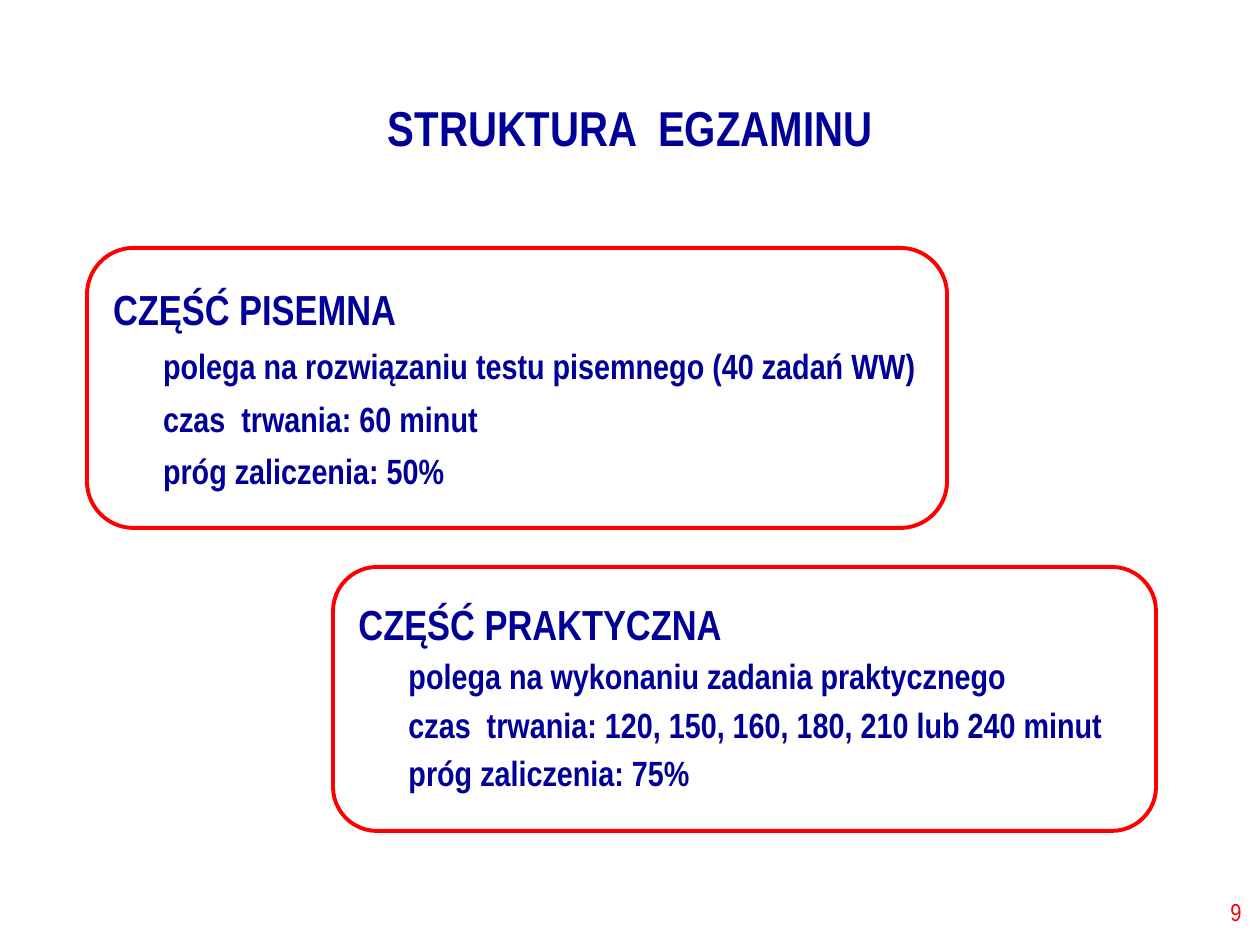
import dataclasses

import lxml.etree
import pptx
import pptx.dml.color
import pptx.enum.shapes
import pptx.enum.text
import pptx.oxml.ns
import pptx.util

EMU_PER_PX = 914400 / 126
ALIGN = pptx.enum.text.PP_ALIGN
qn = pptx.oxml.ns.qn


@dataclasses.dataclass
class Theme:
    font: str = "Arial Narrow"
    ink: str = "000099"
    accent: str = "FF0000"
    paper: str = "FFFFFF"
    title: int = 28
    heading: int = 24
    item: int = 20
    number: int = 14
    outline: float = 2.25


def px(length):
    return pptx.util.Emu(round(length * EMU_PER_PX))


def rgb(value):
    return pptx.dml.color.RGBColor.from_string(value)


def apply(target, values):
    for name, value in values.items():
        setattr(target, name, value)


class SlideBuilder:
    def __init__(self, deck, theme):
        self.theme = theme
        self.page = deck.slides.add_slide(deck.slide_layouts[1])

    def place(self, shape, left, top, width, height):
        apply(shape, {"left": px(left), "top": px(top),
                      "width": px(width), "height": px(height)})

    def frame(self, shape, **values):
        box = shape.text_frame
        apply(box, {"word_wrap": True,
                    "auto_size": pptx.enum.text.MSO_AUTO_SIZE.NONE,
                    "vertical_anchor": pptx.enum.text.MSO_ANCHOR.MIDDLE, **values})
        return box

    def add_text(self, para, text, size, color, bold=True, **values):
        apply(para, values)
        span = para.add_run()
        span.text = text
        apply(span.font, {"name": self.theme.font, "size": pptx.util.Pt(size), "bold": bold})
        span.font.color.rgb = rgb(color)

    def bullet(self, para, char, indent, hanging):
        props = para._p.get_or_add_pPr()
        props.set("marL", str(px(indent)))
        props.set("indent", str(-px(hanging)))
        if not char:
            lxml.etree.SubElement(props, qn("a:buNone"))
            return
        color = lxml.etree.SubElement(props, qn("a:buClr"))
        lxml.etree.SubElement(color, qn("a:srgbClr"), val=self.theme.paper)
        lxml.etree.SubElement(props, qn("a:buFont"), typeface="Arial")
        lxml.etree.SubElement(props, qn("a:buChar"), char=char)

    def title(self, text, *area):
        shape = self.page.shapes.title
        self.place(shape, *area)
        box = self.frame(shape, margin_top=0, margin_bottom=0)
        self.add_text(box.paragraphs[0], text, self.theme.title, self.theme.ink,
                      alignment=ALIGN.CENTER, line_spacing=1.08)

    def number(self, text, *area):
        shape = self.page.shapes.add_textbox(0, 0, 0, 0)
        self.place(shape, *area)
        self.add_text(self.frame(shape).paragraphs[0], text, self.theme.number,
                      self.theme.accent, bold=False, alignment=ALIGN.RIGHT)

    def rounded_shape(self, *area):
        shape = self.page.shapes.add_shape(
            pptx.enum.shapes.MSO_SHAPE.ROUNDED_RECTANGLE, 0, 0, 0, 0)
        self.place(shape, *area)
        shape.shadow.inherit = False
        shape.fill.solid()
        shape.fill.fore_color.rgb = rgb(self.theme.paper)
        return shape

    def rounded_body(self, *area):
        shape = self.page.placeholders[1]
        self.place(shape, *area)
        outline = lxml.etree.SubElement(shape._element.spPr, qn("a:prstGeom"), prst="roundRect")
        lxml.etree.SubElement(outline, qn("a:avLst"))
        return shape

    def card(self, shape, heading, items, spacing):
        shape.line.color.rgb = rgb(self.theme.accent)
        shape.line.width = pptx.util.Pt(self.theme.outline)
        box = self.frame(shape)
        para = box.paragraphs[0]
        self.bullet(para, None, 48, 48)
        self.add_text(para, heading, self.theme.heading, self.theme.ink, alignment=ALIGN.LEFT,
                      line_spacing=spacing, space_before=pptx.util.Pt(0))
        for item in items:
            para = box.add_paragraph()
            self.bullet(para, "▪", 50, 36)
            self.add_text(para, item, self.theme.item, self.theme.ink, level=1,
                          alignment=ALIGN.LEFT, line_spacing=spacing,
                          space_before=pptx.util.Pt(6))


def main():
    deck = pptx.Presentation()
    deck.slide_width, deck.slide_height = px(1260), px(945)
    slide = SlideBuilder(deck, Theme())

    # Title and page number
    slide.title("STRUKTURA  EGZAMINU", 87, 93, 1086, 63)
    slide.number("9", 970, 887, 284, 50)

    # Written part
    slide.card(slide.rounded_shape(87, 248, 860, 280), "CZĘŚĆ PISEMNA", [
        "polega na rozwiązaniu testu pisemnego (40 zadań WW)",
        "czas  trwania: 60 minut",
        "próg zaliczenia: 50%",
    ], 1.0)

    # Practical part
    slide.card(slide.rounded_body(333, 567, 823, 264), "CZĘŚĆ PRAKTYCZNA", [
        "polega na wykonaniu zadania praktycznego",
        "czas  trwania: 120, 150, 160, 180, 210 lub 240 minut",
        "próg zaliczenia: 75%",
    ], 0.9)

    deck.save("out.pptx")


if __name__ == "__main__":
    main()
